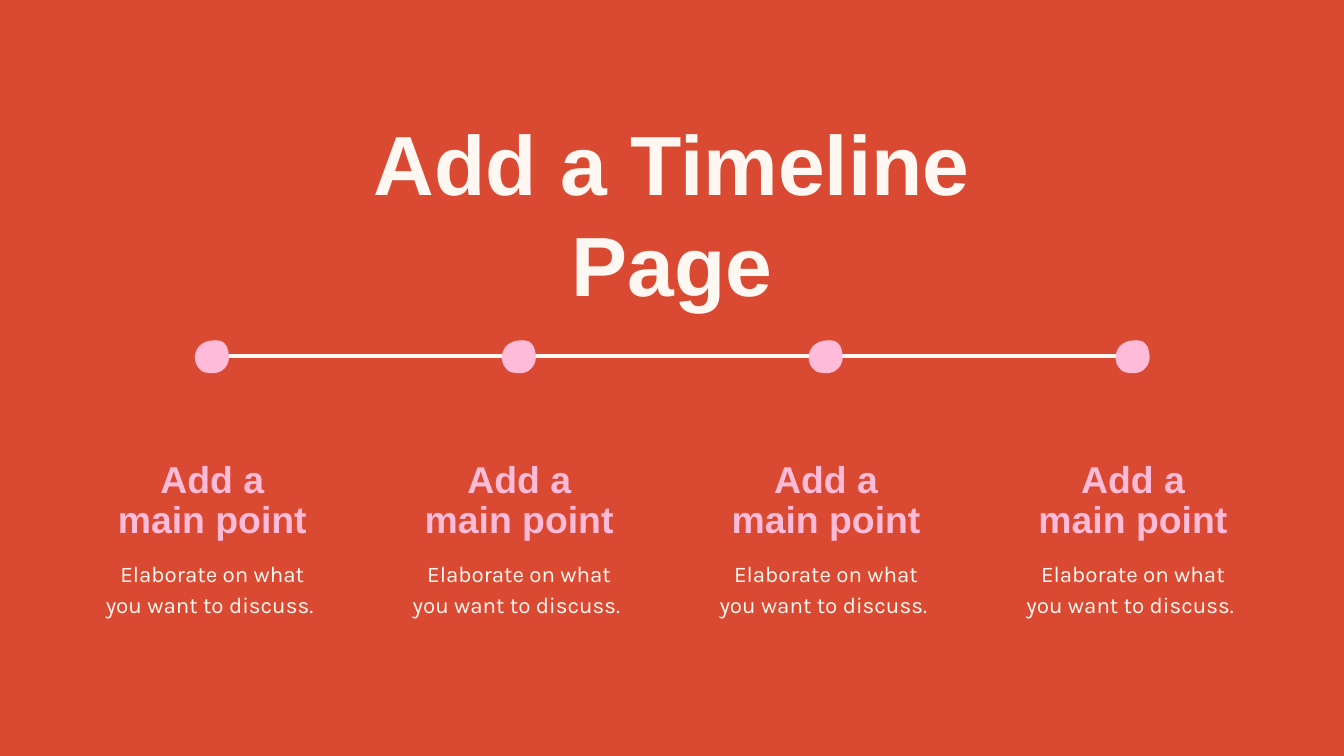
from dataclasses import dataclass

from pptx import Presentation
from pptx import util as u
from pptx.dml.color import RGBColor
from pptx.enum import shapes, text
from pptx.oxml.ns import qn
from lxml import etree


@dataclass(frozen=True)
class TextStyle:
    font: str
    size: float
    color: str
    bold: bool = False
    spacing: float | None = None


@dataclass(frozen=True)
class Theme:
    background: str = "DA4A32"
    cream: str = "FFF8F2"
    pink: str = "FFBBD8"
    line_width: float = 2.25
    title: TextStyle = TextStyle("Arial", 45, cream, bold=True)
    heading: TextStyle = TextStyle("Arial", 20, pink, bold=True, spacing=0.9)
    body: TextStyle = TextStyle("Karla", 12, cream, spacing=1.15)


DOT_OUTLINE = [
    (130, 4), (155, 2), (180, 5), (203, 12), (222, 27), (238, 50), (248, 80),
    (253, 110), (254, 135), (250, 160), (240, 185), (225, 207), (205, 226),
    (182, 239), (155, 246), (125, 247), (95, 245), (68, 240), (45, 227),
    (25, 205), (10, 180), (2, 153), (0, 125), (4, 100), (14, 73), (32, 46),
    (57, 26), (85, 13), (108, 6),
]
DOT_UNITS_PER_INCH = 1000
POINTS = [
    (["Add a", "main point"], ["Elaborate on what", "you want to discuss. "])
] * 4
COLUMN_LEFT, COLUMN_WIDTH = 0.72, 1.72
COLUMN_STEP = 6.85 / 3
DOT_LEFT, DOT_TOP = 1.45, 2.53


class TimelineSlide:
    """Draws themed timeline elements on one slide."""

    def __init__(self, page, theme):
        self.page = page
        self.theme = theme
        page.background.fill.solid()
        page.background.fill.fore_color.rgb = RGBColor.from_string(theme.background)

    def add_text(self, parent, lines, style, left, top, width, height):
        box = parent.shapes.add_textbox(*map(u.Inches, (left, top, width, height)))
        frame = box.text_frame
        frame.word_wrap = True
        frame.auto_size = text.MSO_AUTO_SIZE.SHAPE_TO_FIT_TEXT
        frame.margin_left = frame.margin_right = 0
        frame.margin_top = frame.margin_bottom = 0
        frame.text = "\n".join(lines)
        for para in frame.paragraphs:
            para.alignment = text.PP_ALIGN.CENTER
            para.line_spacing = style.spacing
            para.font.name = style.font
            para.font.size = u.Pt(style.size)
            para.font.bold = style.bold
            para.font.color.rgb = RGBColor.from_string(style.color)

    def add_point(self, heading, body, left):
        group = self.page.shapes.add_group_shape()
        self.add_text(group, body, self.theme.body, left, 4.14, COLUMN_WIDTH, 0.43)
        self.add_text(group, heading, self.theme.heading, left, 3.43, COLUMN_WIDTH, 0.61)

    def add_line(self, start, end, top):
        line = self.page.shapes.add_connector(
            shapes.MSO_CONNECTOR.STRAIGHT, *map(u.Inches, (start, top, end, top))
        )
        line.line.color.rgb = RGBColor.from_string(self.theme.cream)
        line.line.width = u.Pt(self.theme.line_width)
        etree.SubElement(line._element.spPr, qn("a:effectLst"))

    def add_dot(self, left, top):
        builder = self.page.shapes.build_freeform(
            *DOT_OUTLINE[0], scale=u.Inches(1) / DOT_UNITS_PER_INCH
        )
        builder.add_line_segments(DOT_OUTLINE[1:], close=True)
        dot = builder.convert_to_shape(u.Inches(left), u.Inches(top))
        dot.shadow.inherit = False
        dot.fill.solid()
        dot.fill.fore_color.rgb = RGBColor.from_string(self.theme.pink)
        dot.line.fill.background()


def main():
    deck = Presentation()
    deck.slide_width = u.Inches(10)
    deck.slide_height = deck.slide_width * 9 // 16
    theme = Theme()
    page = deck.slides.add_slide(deck.slide_layouts[6])
    timeline = TimelineSlide(page, theme)
    timeline.add_text(page, ["Add a Timeline Page"], theme.title, 1.98, 0.83, 6.04, 0.76)
    for index, (heading, body) in enumerate(POINTS):
        timeline.add_point(heading, body, COLUMN_LEFT + index * COLUMN_STEP)
    timeline.add_line(1.52, 8.42, 2.65)
    for index in range(len(POINTS)):
        timeline.add_dot(DOT_LEFT + index * COLUMN_STEP, DOT_TOP)
    deck.save("out.pptx")


if __name__ == "__main__":
    main()
